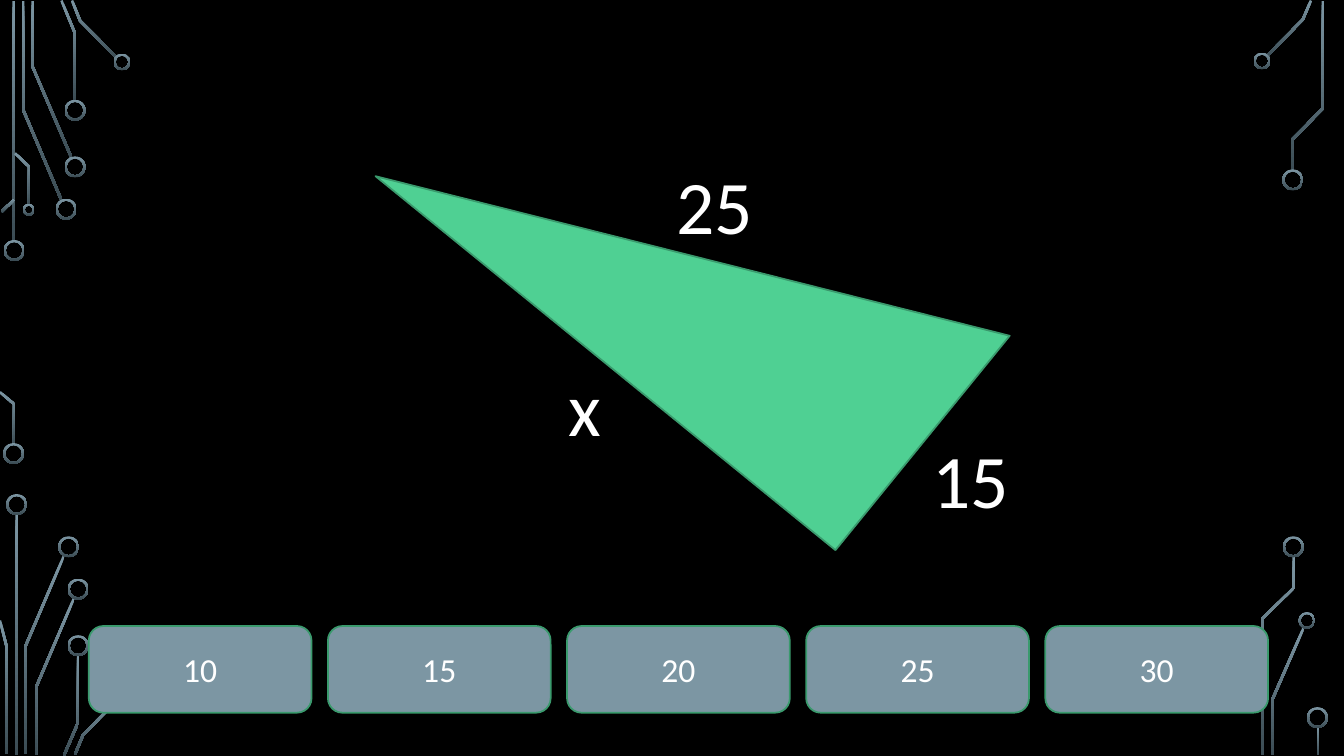
from math import hypot

from pptx import Presentation
from pptx.dml.color import RGBColor
from pptx.enum.shapes import MSO_SHAPE
from pptx.enum.text import MSO_ANCHOR, MSO_AUTO_SIZE, PP_ALIGN
from pptx.util import Pt

DONUT = MSO_SHAPE.DONUT
ROUND = MSO_SHAPE.ROUNDED_RECTANGLE
TRIANGLE = MSO_SHAPE.ISOSCELES_TRIANGLE
MIDDLE = MSO_ANCHOR.MIDDLE
GROW = MSO_AUTO_SIZE.SHAPE_TO_FIT_TEXT
CENTER = PP_ALIGN.CENTER

BLACK = RGBColor(0x00, 0x00, 0x00)
WHITE = RGBColor(0xFF, 0xFF, 0xFF)
STEEL = RGBColor(0x7C, 0x96, 0xA3)
SLATE = RGBColor(0x3B, 0x4C, 0x54)
GREEN = RGBColor(0x4F, 0xD0, 0x93)
EDGE = RGBColor(0x3A, 0x9A, 0x6D)
FONT = "Calibri"
WIDTH, HEIGHT = 960, 540
TRACE = 1.8  # width of a circuit trace
WALL = 1.45  # wall of a ring

# Each trace is a centre line; each ring is centre x, centre y, diameter.
LEFT_TRACES = [
    [(9.7, 0.7), (9.7, 172.8)],
    [(43.9, 142.9), (16.6, 78.5), (16.6, 0.7)],
    [(51.1, 112.7), (23.4, 47.9), (23.4, 0.7)],
    [(53.6, 72), (53.6, 23.8), (43.9, 0.4)],
    [(83.2, 41), (57.2, 14.8), (51.5, 0.4)],
    [(1.1, 151.2), (10.1, 142.6)],
    [(10.1, 317.5), (10.1, 288.7), (0, 280.1)],
    [(20.9, 146.2), (20.9, 119.2), (10.8, 109.4)],
    [(11.9, 367.2), (11.9, 539.3)],
    [(18.4, 538.6), (18.4, 461.2), (45.7, 397.1)],
    [(4.7, 538.6), (4.7, 461.5), (0, 443.2)],
    [(25.6, 539.3), (25.6, 491.4), (52.9, 427.3)],
    [(45.7, 539.6), (55.8, 516.2), (55.8, 468)],
    [(53.6, 538.9), (59.4, 524.9), (85, 499)],
]
LEFT_RINGS = [
    (10.1, 178.9, 15), (9.7, 324, 15), (47.2, 149.4, 15), (53.6, 119.2, 15),
    (53.6, 78.8, 15), (87.1, 44.3, 12), (20.5, 149.8, 8.6), (11.9, 360.4, 15),
    (49, 390.6, 15), (55.8, 420.8, 15), (55.8, 461.2, 15),
]
RIGHT_TRACES = [
    [(5, 40), (30.6, 14), (36.4, 0.4)],
    [(9, 539.3), (9, 499.3), (31, 448.9)],
    [(23, 121.7), (23, 99.7), (45, 77.4), (45, 0.7)],
    [(1.8, 539.3), (1.8, 441.7), (24.1, 420.1), (24.1, 397.4)],
    [(41.4, 519.1), (41.4, 539.3)],
]
RIGHT_RINGS = [
    (1.4, 43.6, 12), (23.4, 128.5, 15), (33.5, 443.2, 12),
    (23.8, 390.6, 15), (41, 512.6, 15),
]


def shade(shape):
    """Fill with the vertical steel gradient, without outline."""
    shape.shadow.inherit = False
    shape.line.fill.background()
    shape.fill.gradient()
    shape.fill.gradient_angle = 270
    for stop, color in zip(shape.fill.gradient_stops, (STEEL, SLATE)):
        stop.color.rgb = color


def ribbon(points, half):
    """Return the outline of a mitred band around a centre line."""
    dirs = []
    for (ax, ay), (bx, by) in zip(points, points[1:]):
        size = hypot(bx - ax, by - ay)
        dirs.append(((bx - ax) / size, (by - ay) / size))
    near, far = [], []
    for (x, y), (ax, ay), (bx, by) in zip(points, dirs[:1] + dirs, dirs + dirs[-1:]):
        k = half / (1 + ax * bx + ay * by)
        dx, dy = -(ay + by) * k, (ax + bx) * k
        near.append((x + dx, y + dy))
        far.append((x - dx, y - dy))
    return near + far[::-1]


def circuit(slide, left, top, traces, rings):
    for points in traces:
        band = [(Pt(left + x), Pt(top + y)) for x, y in ribbon(points, TRACE / 2)]
        path = slide.shapes.build_freeform(*band[0])
        path.add_line_segments(band[1:], close=True)
        shade(path.convert_to_shape())
    for x, y, size in rings:
        ring = slide.shapes.add_shape(
            DONUT, Pt(left + x - size / 2), Pt(top + y - size / 2), Pt(size), Pt(size))
        ring.adjustments[0] = WALL / size
        shade(ring)


def paint(shape, color):
    shape.shadow.inherit = False
    shape.fill.solid()
    shape.fill.fore_color.rgb = color
    shape.line.color.rgb = EDGE
    shape.line.width = Pt(1.25)


def write(frame, text, size):
    frame.text = text
    para = frame.paragraphs[0]
    para.alignment = CENTER
    font = para.runs[0].font
    font.name, font.size, font.color.rgb = FONT, Pt(size), WHITE


def answers(slide, left, top, width, height, values, gap=11.7):
    """Split the box into equal answer buttons."""
    wide = (width - gap * (len(values) - 1)) / len(values)
    for i, value in enumerate(values):
        button = slide.shapes.add_shape(
            ROUND, Pt(left + i * (wide + gap)), Pt(top), Pt(wide), Pt(height))
        paint(button, STEEL)
        button.text_frame.vertical_anchor = MIDDLE
        write(button.text_frame, value, 24)


def figure(slide, left, top, width, height):
    """Draw the tilted right triangle and the lengths of its sides."""
    shape = slide.shapes.add_shape(TRIANGLE, Pt(left), Pt(top), Pt(width), Pt(height))
    shape.adjustments[0] = 1
    shape.rotation = 39.1
    paint(shape, GREEN)
    for text, x, y, wide in (("25", 190, 26, 75), ("15", 373, 221.8, 75),
                             ("x", 113.8, 170, 41.8)):
        box = slide.shapes.add_textbox(Pt(left + x), Pt(top + y), Pt(wide), Pt(72.7))
        box.text_frame.word_wrap = False
        box.text_frame.auto_size = GROW
        write(box.text_frame, text, 54)


def main():
    deck = Presentation()
    deck.slide_width, deck.slide_height = Pt(WIDTH), Pt(HEIGHT)
    slide = deck.slides.add_slide(deck.slide_layouts[6])
    slide.background.fill.solid()
    slide.background.fill.fore_color.rgb = BLACK
    circuit(slide, 0, 0, LEFT_TRACES, LEFT_RINGS)
    circuit(slide, 900, 0, RIGHT_TRACES, RIGHT_RINGS)
    answers(slide, 63.4, 447.2, 842.4, 61.9, ["10", "15", "20", "25", "30"])
    figure(slide, 283, 84.2, 423.4, 197.3)
    deck.save("out.pptx")


if __name__ == "__main__":
    main()
